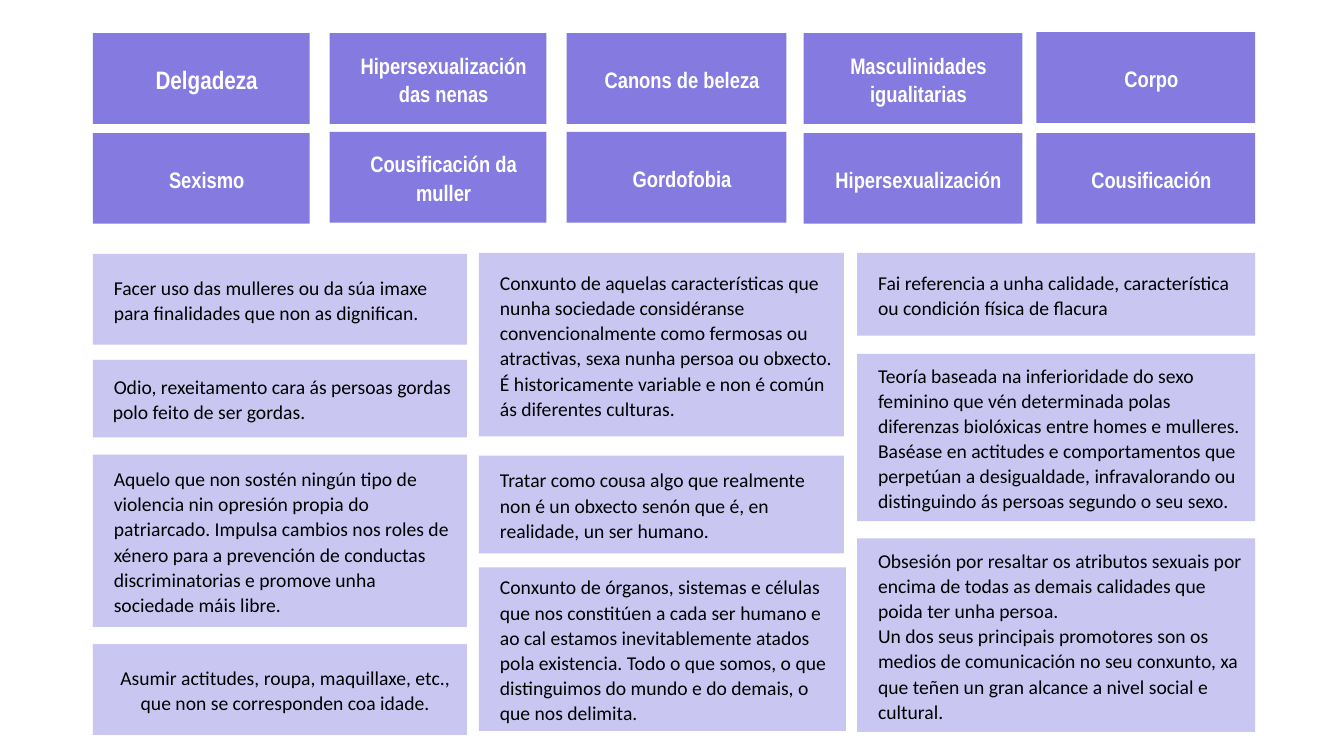
from pptx import Presentation
from pptx.dml.color import RGBColor
from pptx.enum.shapes import MSO_SHAPE
from pptx.enum.text import MSO_ANCHOR, PP_ALIGN
from pptx.util import Inches, Pt

COLORS = {"term": "847AE0", "definition": "CAC6F2", "white": "FFFFFF", "black": "000000"}

prs = Presentation()
prs.slide_width, prs.slide_height = Inches(13.33), Inches(7.5)
s = prs.slides.add_slide(prs.slide_layouts[6])


def add_card(left, top, width, height, fill, paragraphs, align, font, size, color, bold,
             margin=0.11, indent=0):
    sp = s.shapes.add_shape(MSO_SHAPE.RECTANGLE, Inches(left), Inches(top),
                            Inches(width), Inches(height))
    sp.shadow.inherit = False
    sp.fill.solid()
    sp.fill.fore_color.rgb = RGBColor.from_string(COLORS[fill])
    sp.line.fill.background()
    tf = sp.text_frame
    tf.word_wrap = True
    tf.vertical_anchor = MSO_ANCHOR.MIDDLE
    for i, text in enumerate(paragraphs):
        p = tf.paragraphs[0] if i == 0 else tf.add_paragraph()
        p.alignment = align
        p.line_spacing = 1.07
        p.space_after = Pt(8 if i == len(paragraphs) - 1 else 0)
        pPr = p._p.get_or_add_pPr()
        pPr.set("marL", str(Inches(margin)))
        pPr.set("indent", str(Inches(indent)))
        r = p.add_run()
        r.text = text
        r.font.name, r.font.size, r.font.bold = font, Pt(size), bold
        r.font.color.rgb = RGBColor.from_string(COLORS[color])


# Terms: one column per entry, each with (text, top, size)
term_columns = [
    (0.92, 2.15, [("Delgadeza", 0.33, 18), ("Sexismo", 1.32, 16)]),
    (3.27, 2.15, [("Hipersexualización das nenas", 0.33, 16),
                  ("Cousificación da muller", 1.31, 16)]),
    (5.62, 2.18, [("Canons de beleza", 0.33, 16), ("Gordofobia", 1.31, 16)]),
    (7.97, 2.17, [("Masculinidades igualitarias", 0.33, 16), ("Hipersexualización", 1.32, 16)]),
    (10.28, 2.17, [("Corpo", 0.32, 16), ("Cousificación", 1.32, 16)]),
]
for left, width, terms in term_columns:
    for text, top, size in terms:
        add_card(left, top, width, 0.9, "term", [text], PP_ALIGN.CENTER,
                 "Arial Narrow", size, "white", True)

# Definitions: one column per entry, each with (top, height, paragraphs, options)
definition_columns = [
    (0.92, 3.71, [
        (2.52, 0.9, ["Facer uso das mulleres ou da súa imaxe para finalidades que non as "
                     "dignifican."], {}),
        (3.57, 0.77, ["Odio, rexeitamento cara ás persoas gordas polo feito de ser gordas."],
         {"margin": 0.1, "indent": 0.01}),
        (4.51, 1.71, ["Aquelo que non sostén ningún tipo de violencia nin opresión propia do "
                      "patriarcado. Impulsa cambios nos roles de xénero para a prevención de "
                      "conductas discriminatorias e promove unha sociedade máis libre."], {}),
        (6.39, 0.9, ["Asumir actitudes, roupa, maquillaxe, etc., que non se corresponden coa "
                     "idade."], {"align": PP_ALIGN.CENTER}),
    ]),
    (4.75, 3.62, [
        (2.51, 1.82, ["Conxunto de aquelas características que nunha sociedade considéranse "
                      "convencionalmente como fermosas ou atractivas, sexa nunha persoa ou "
                      "obxecto. É historicamente variable e non é común ás diferentes "
                      "culturas."], {}),
        (4.52, 0.97, ["Tratar como cousa algo que realmente non é un obxecto senón que é, en "
                      "realidade, un ser humano."], {}),
        (5.63, 1.62, ["Conxunto de órganos, sistemas e células que nos constitúen a cada ser "
                      "humano e ao cal estamos inevitablemente atados pola existencia. Todo o "
                      "que somos, o que distinguimos do mundo e do demais, o que nos "
                      "delimita."], {"width": 3.64}),
    ]),
    (8.5, 3.95, [
        (2.51, 0.82, ["Fai referencia a unha calidade, característica ou condición física de "
                      "flacura"], {}),
        (3.51, 1.66, ["Teoría baseada na inferioridade do sexo feminino que vén determinada "
                      "polas diferenzas biolóxicas entre homes e mulleres. Baséase en actitudes "
                      "e comportamentos que perpetúan a desigualdade, infravalorando ou "
                      "distinguindo ás persoas segundo o seu sexo."], {}),
        (5.34, 1.92, ["Obsesión por resaltar os atributos sexuais por encima de todas as demais "
                      "calidades que poida ter unha persoa.",
                      "Un dos seus principais promotores son os medios de comunicación no seu "
                      "conxunto, xa que teñen un gran alcance a nivel social e cultural."], {}),
    ]),
]
for left, width, definitions in definition_columns:
    for top, height, paragraphs, options in definitions:
        style = {"width": width, "align": PP_ALIGN.LEFT, **options}
        add_card(left, top, height=height, fill="definition", paragraphs=paragraphs,
                 font="Calibri", size=14, color="black", bold=False, **style)

prs.save("out.pptx")
